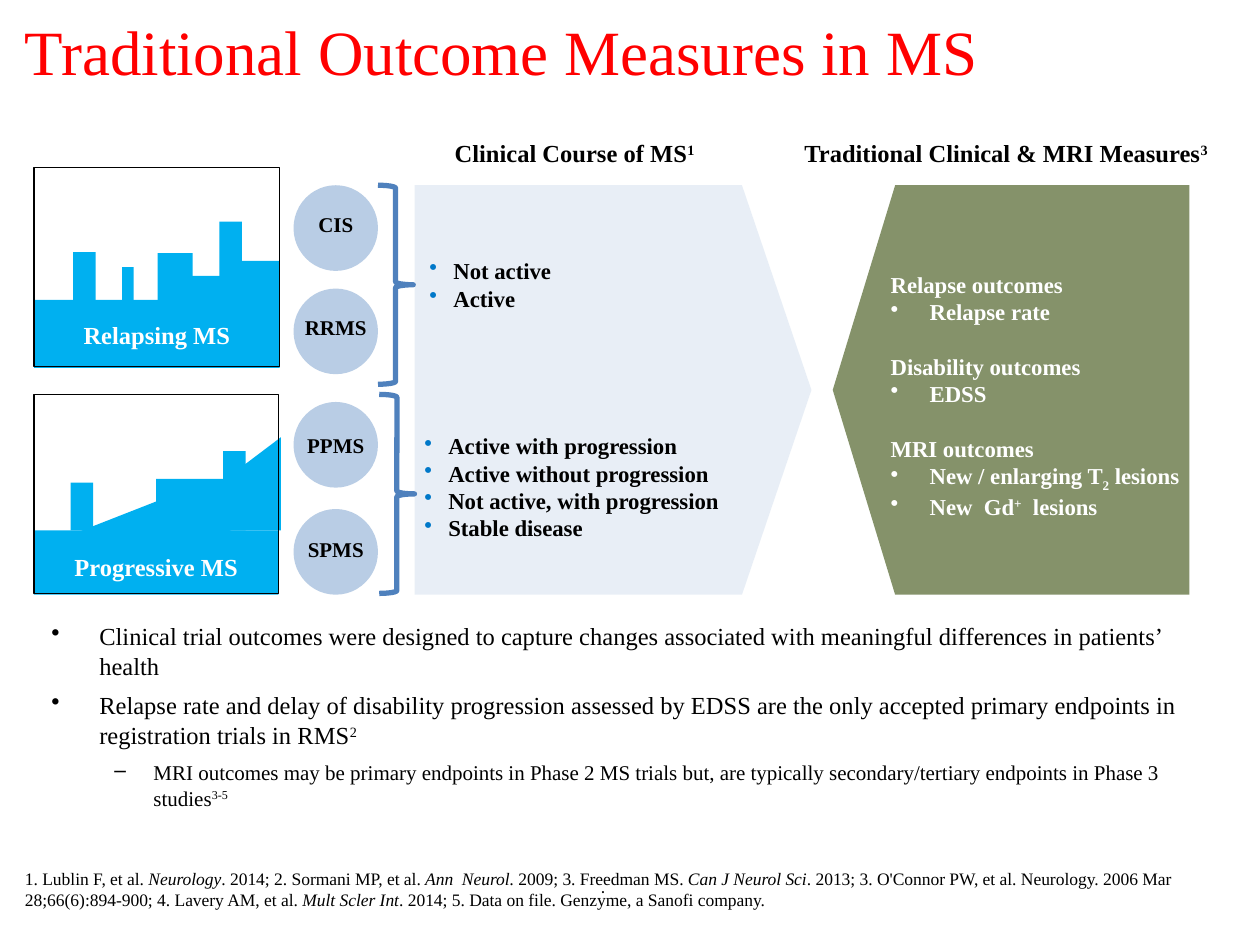
from lxml import etree
from pptx import Presentation
from pptx.dml.color import RGBColor
from pptx.enum.shapes import MSO_SHAPE
from pptx.enum.text import MSO_ANCHOR, PP_ALIGN
from pptx.oxml.ns import qn
from pptx.util import Pt

RECT, OVAL = MSO_SHAPE.RECTANGLE, MSO_SHAPE.OVAL
ARROW, BRACE = MSO_SHAPE.PENTAGON, MSO_SHAPE.RIGHT_BRACE
TRIANGLE, WEDGE = MSO_SHAPE.ISOSCELES_TRIANGLE, MSO_SHAPE.RIGHT_TRIANGLE
LEFT, CENTER = PP_ALIGN.LEFT, PP_ALIGN.CENTER
TOP, MIDDLE, BOTTOM = MSO_ANCHOR.TOP, MSO_ANCHOR.MIDDLE, MSO_ANCHOR.BOTTOM

PX = 9144  # 100 px to the inch
BASELINES = {"super": "30000", "sub": "-25000"}
COLORS = {
    "title": "FF0000", "text": "000000", "white": "FFFFFF", "sky": "00B0F0",
    "pale": "B9CDE5", "olive": "4F6228", "brace": "4F81BD", "bullet": "0078C9",
}

deck = Presentation()
deck.slide_width, deck.slide_height = 1000 * PX, 750 * PX
page = deck.slides.add_slide(deck.slide_layouts[6])


def add_box(kind, left, top, width, height, fill=None, alpha=None, line=None,
            line_width=0.75, anchor=TOP, wrap=True):
    """Add a preset shape, or a text box when kind is None."""
    place = [length * PX for length in (left, top, width, height)]
    if kind is None:
        box = page.shapes.add_textbox(*place)
    else:
        box = page.shapes.add_shape(kind, *place)
        box.shadow.inherit = False
        if line:
            box.line.color.rgb = RGBColor.from_string(COLORS[line])
            box.line.width = Pt(line_width)
        else:
            box.line.fill.background()
        if fill:
            box.fill.solid()
            box.fill.fore_color.rgb = RGBColor.from_string(COLORS[fill])
        else:
            box.fill.background()
        if alpha:
            color = box._element.spPr.find(".//" + qn("a:srgbClr"))
            etree.SubElement(color, qn("a:alpha")).set("val", str(alpha * 1000))
    box.text_frame.word_wrap = wrap
    box.text_frame.vertical_anchor = anchor
    return box


def write(box, text, size=13, color="text", bold=False, align=LEFT, before=0,
          font="Times New Roman", bullet=None, bullet_color=None, indent=0, hang=0, level=0):
    """Append a paragraph; text is a string or a list of (words, style) spans."""
    frame = box.text_frame
    para = frame.paragraphs[0] if not frame.text else frame.add_paragraph()
    para.alignment, para.level = align, level
    if bullet:
        properties = para._p.get_or_add_pPr()
        properties.set("marL", str(indent * PX))
        properties.set("indent", str(-hang * PX))
        tint = etree.SubElement(etree.SubElement(properties, qn("a:buClr")), qn("a:srgbClr"))
        tint.set("val", COLORS[bullet_color or color])
        etree.SubElement(properties, qn("a:buChar")).set("char", bullet)
    if before:
        para.space_before = Pt(before)
    for words, style in [(text, None)] if isinstance(text, str) else text:
        span = para.add_run()
        span.text = words
        span.font.name, span.font.size, span.font.bold = font, Pt(size), bold
        span.font.color.rgb = RGBColor.from_string(COLORS[color])
        if style == "italic":
            span.font.italic = True
        elif style:
            span.font._element.set("baseline", BASELINES[style])


# Body points
body = add_box(None, 31, 495, 935, 153, anchor=BOTTOM)
point = dict(size=14, bullet="•", indent=38, hang=38)
write(body, "Clinical trial outcomes were designed to capture changes associated with "
      "meaningful differences in patients’ health", **point)
write(body, [("Relapse rate and delay of disability progression assessed by EDSS are the only "
              "accepted primary endpoints in registration trials in RMS", None),
             ("2", "super")], before=6, **point)
write(body, [("MRI outcomes may be primary endpoints in Phase 2 MS trials but, are typically "
              "secondary/tertiary endpoints in Phase 3 studies", None), ("3-5", "super")],
      size=12, before=6, bullet="–", indent=81, hang=31, level=1)

# Title
title = add_box(None, 10, 12, 900, 55, anchor=MIDDLE)
write(title, "Traditional Outcome Measures in MS", size=36, color="title")

# References
write(add_box(None, 467, 690, 24, 27, wrap=False), ".", size=10, font="Calibri")
references = add_box(None, 10, 684, 956, 44)
write(references, [
    ("1. Lublin F, et al. ", None), ("Neurology", "italic"),
    (". 2014; 2. Sormani MP, et al. ", None), ("Ann  Neurol. ", "italic"),
    ("2009; 3. Freedman MS. ", None), ("Can J Neurol Sci", "italic"),
    (". 2013; 3. O'Connor PW, et al. Neurology. 2006 Mar 28;66(6):894-900; "
     "4. Lavery AM, et al. ", None), ("Mult Scler Int", "italic"),
    (". 2014; 5. Data on file. Genzyme, a Sanofi company.", None)], size=10)

# Facing arrows
measures_arrow = add_box(ARROW, 661, 147, 283, 325, fill="olive", alpha=69)
measures_arrow._element.spPr.find(qn("a:xfrm")).set("flipH", "1")
course_arrow = add_box(ARROW, 329, 147, 315, 325, fill="pale", alpha=32)
for arrow in (measures_arrow, course_arrow):
    arrow.adjustments[0] = 0.175

# Clinical and MRI measures
measures = add_box(None, 697, 210, 255, 207)
outcomes = [
    ("Relapse outcomes", ["Relapse rate"]),
    ("Disability outcomes", ["EDSS"]),
    ("MRI outcomes", [
        [("New / enlarging T", None), ("2", "sub"), (" lesions", None)],
        [("New  Gd", None), ("+", "super"), ("  lesions", None)]]),
]
for number, (heading, items) in enumerate(outcomes):
    write(measures, heading, color="white", bold=True, before=15.5 if number else 0)
    for item in items:
        write(measures, item, color="white", bold=True, bullet="•", indent=31, hang=31)

# Relapsing skyline
for place in [(27, 238, 195, 54), (58, 200, 18, 38), (97, 212, 9, 38), (125, 201, 28, 38),
              (174, 176, 18, 63), (191, 207, 31, 32), (149, 219, 31, 32)]:
    add_box(RECT, *place, fill="sky")

# Progressive skyline
for place in [(27, 421, 194, 51), (124, 380, 56, 38), (191, 387, 31, 32), (149, 399, 31, 32),
              (177, 358, 18, 63), (56, 383, 18, 38)]:
    add_box(RECT, *place, fill="sky")
add_box(TRIANGLE, 27, 398, 194, 38, fill="sky")
add_box(WEDGE, 137, 335, 74, 98, fill="sky").rotation = 270

# Skyline labels and frames
for label, label_top, frame_top, width in [("Relapsing MS", 249, 133, 195),
                                           ("Progressive MS", 433, 313, 194)]:
    band = add_box(RECT, 27, label_top, width, 34, fill="sky", anchor=MIDDLE)
    write(band, label, size=14, color="white", bold=True, align=CENTER)
    add_box(RECT, 27, frame_top, width, 158, line="text")

# Disease types
for label, circle_top, label_top in [("CIS", 147, 163), ("RRMS", 229, 245),
                                     ("PPMS", 319, 338), ("SPMS", 404, 421)]:
    add_box(OVAL, 233, circle_top, 67, 68, fill="pale")
    caption = add_box(None, 231, label_top, 71, 30, wrap=False)
    write(caption, label, size=12, bold=True, align=CENTER)

# Clinical course lists
for place, items in [
    ((331, 199, 221, 54), ["Not active", "Active"]),
    ((327, 338, 300, 98), ["Active with progression", "Active without progression",
                           "Not active, with progression", "Stable disease"]),
]:
    course = add_box(None, *place)
    for item in items:
        write(course, item, bold=True, bullet="•", bullet_color="bullet", indent=19, hang=19)

# Braces
for left, top in [(300, 147), (301, 313)]:
    add_box(BRACE, left, top, 28, 158, line="brace", line_width=3)

# Column headings
for left, width, heading, note in [(302, 308, "Clinical Course of MS", "1"),
                                   (611, 375, "Traditional Clinical & MRI Measures", "3")]:
    write(add_box(None, left, 105, width, 34), [(heading, None), (note, "super")],
          size=14, bold=True, align=CENTER)

deck.save("out.pptx")
